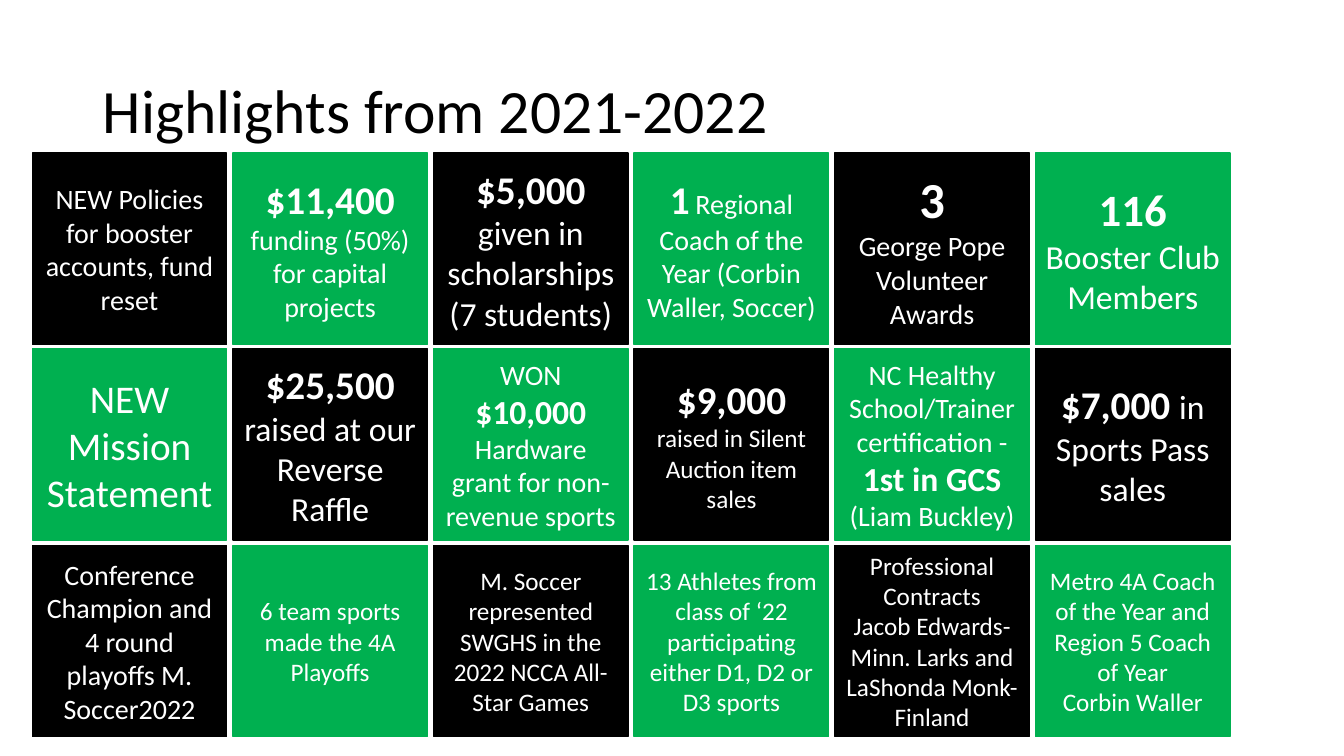
from pptx import Presentation
from pptx.dml.color import RGBColor as RGB
from pptx.enum.shapes import MSO_SHAPE as Kind
from pptx.enum.text import MSO_ANCHOR as Anchor, PP_ALIGN as Align
from pptx.util import Inches, Pt


def color(part, code):
    part.rgb = RGB.from_string(code)


def write(shape, runs, hue="FFFFFF", align=Align.CENTER, space=1.0):
    frame = shape.text_frame
    frame.word_wrap = True
    frame.vertical_anchor = Anchor.MIDDLE
    para = frame.paragraphs[0]
    for text, size, bold in runs:
        if text.startswith("\n"):
            para = frame.add_paragraph()
        para.alignment = align
        para.line_spacing = space
        run = para.add_run()
        run.text = text.lstrip("\n")
        font = run.font
        font.name, font.size, font.bold = "Calibri", Pt(size), bold
        color(font.color, hue)


BLACK, GREEN = "000000", "00B050"
LEFT, STEP, WIDTH, HEIGHT = 0.32, 1.99, 1.93, 1.9
TOPS = [1.52, 3.46, 5.41]

grid = [
    [
        [("NEW Policies for booster accounts, fund reset", 20, False)],
        [("$11,400 ", 28, True), ("funding (50%) for capital projects", 20, False)],
        [("$5,000 ", 28, True), ("given in scholarships (7 students)", 24, False)],
        [("1", 28, True), (" ", 18, False),
         ("Regional Coach of the Year (Corbin Waller, Soccer)", 20, False)],
        [("3", 36, True), ("\nGeorge Pope Volunteer Awards", 20, False)],
        [("116", 32, True), (" ", 18, False), ("Booster Club Members", 24, False)],
    ],
    [
        [("NEW Mission Statement", 28, False)],
        [("$25,500 ", 28, True), ("raised at our Reverse Raffle", 24, False)],
        [("WON ", 20, False), ("$10,000 ", 24, True),
         ("Hardware grant for non-revenue sports", 20, False)],
        [("$9,000 ", 28, True), ("raised in Silent Auction item sales", 18, False)],
        [("NC Healthy School/Trainer certification - ", 20, False),
         ("1st in GCS ", 24, True), ("(Liam Buckley)", 20, False)],
        [("$7,000 ", 28, True), ("in Sports Pass sales", 24, False)],
    ],
    [
        [("Conference Champion and 4 round playoffs M. Soccer2022", 20, False)],
        [("6 team sports made the 4A Playoffs", 18, False)],
        [("M. Soccer represented SWGHS in the 2022 NCCA All-Star Games", 18, False)],
        [("13 Athletes from class of ‘22 participating either D1, D2 or D3 sports",
          18, False)],
        [("Professional Contracts", 18, False),
         ("\nJacob Edwards- Minn. Larks and LaShonda Monk- Finland", 18, False)],
        [("Metro 4A Coach of the Year and Region 5 Coach of Year", 18, False),
         ("\nCorbin Waller", 18, False)],
    ],
]

deck = Presentation()
deck.slide_width, deck.slide_height = Inches(13.33), Inches(7.5)
slide = deck.slides.add_slide(deck.slide_layouts[6])

title = slide.shapes.add_textbox(Inches(0.92), Inches(0.4), Inches(11.5), Inches(1.45))
write(title, [("Highlights from 2021-2022", 44, False)],
      hue=BLACK, align=Align.LEFT, space=0.9)

for row, (top, cells) in enumerate(zip(TOPS, grid)):
    for col, runs in enumerate(cells):
        tile = slide.shapes.add_shape(
            Kind.RECTANGLE, Inches(LEFT + col * STEP), Inches(top),
            Inches(WIDTH), Inches(HEIGHT))
        tile.shadow.inherit = False
        hue = GREEN if (row + col) % 2 else BLACK
        tile.fill.solid()
        color(tile.fill.fore_color, hue)
        color(tile.line.color, hue)
        tile.line.width = Pt(1)
        write(tile, runs)

deck.save("out.pptx")
